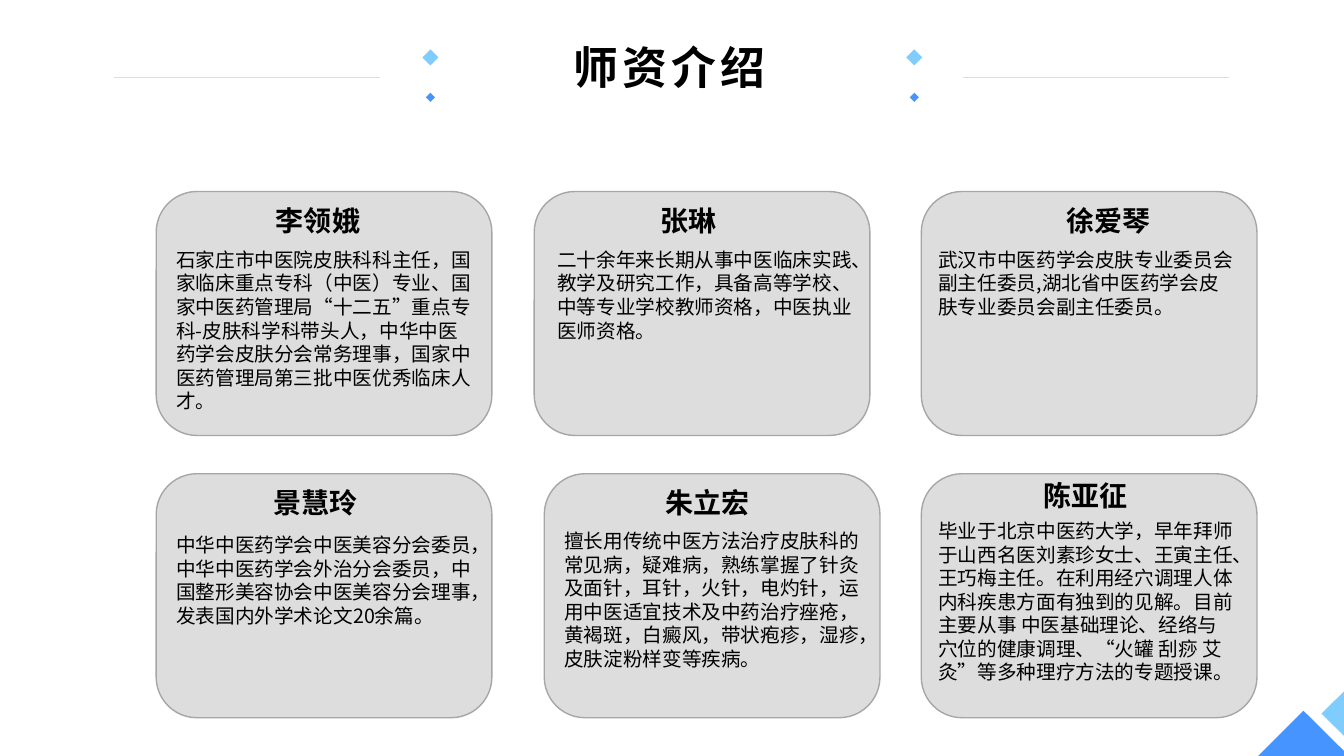
from typing import NamedTuple

from lxml import etree
from pptx import Presentation
from pptx.dml.color import RGBColor
from pptx.enum.shapes import MSO_CONNECTOR, MSO_SHAPE
from pptx.enum.text import MSO_AUTO_SIZE, PP_ALIGN
from pptx.oxml.ns import qn
from pptx.util import Inches, Pt

DIAMOND = MSO_SHAPE.DIAMOND
ROUND = MSO_SHAPE.ROUNDED_RECTANGLE
STRAIGHT = MSO_CONNECTOR.STRAIGHT
GROW = MSO_AUTO_SIZE.SHAPE_TO_FIT_TEXT
LEFT, CENTER = PP_ALIGN.LEFT, PP_ALIGN.CENTER

FONT = "Noto Sans CJK SC"
HEX = {
    "text": "000000",
    "card": "DDDDDD",
    "edge": "A6A6A6",
    "sky": "7FCCFF",
    "blue": "4594FF",
}
CELL = Inches(0.1)
COLS, ROWS = 133.33, 75
CARD_W, CARD_H = 33.3, 24.2
TOP, LOW = 19, 47
BIO_W = 31.3


class Box(NamedTuple):
    col: float
    row: float
    wide: float
    high: float


class Card(NamedTuple):
    col: float
    row: float
    mid: float
    name_row: float
    bio_col: float
    bio_row: float
    lines: int
    name: str
    bio: str


class Gem(NamedTuple):
    row: float
    size: float
    hue: str


class Patch(NamedTuple):
    hue: str
    dots: list[tuple[float, float]]


CARDS = [
    Card(15.5, TOP, 31.55, 19.7, 16.5, 24.1, 7, "李领娥",
         "石家庄市中医院皮肤科科主任，国家临床重点专科（中医）专业、国家中医药管理局“十二五”重点专科-皮肤科学科带头人，"
         "中华中医药学会皮肤分会常务理事，国家中医药管理局第三批中医优秀临床人才。"),
    Card(53, TOP, 68.3, 19.7, 54.3, 24.1, 4, "张琳",
         "二十余年来长期从事中医临床实践、教学及研究工作，具备高等学校、中等专业学校教师资格，中医执业医师资格。"),
    Card(91.4, TOP, 110, 19.7, 92.1, 24.1, 3, "徐爱琴",
         "武汉市中医药学会皮肤专业委员会副主任委员,湖北省中医药学会皮肤专业委员会副主任委员。"),
    Card(15.5, LOW, 31.3, 47.7, 16.5, 52.4, 4, "景慧玲",
         "中华中医药学会中医美容分会委员，中华中医药学会外治分会委员，中国整形美容协会中医美容分会理事，"
         "发表国内外学术论文20余篇。"),
    Card(54, LOW, 70.2, 47.7, 55, 52, 6, "朱立宏",
         "擅长用传统中医方法治疗皮肤科的常见病，疑难病，熟练掌握了针灸及面针，耳针，火针，电灼针，"
         "运用中医适宜技术及中药治疗痤疮，黄褐斑，白癜风，带状疱疹，湿疹，皮肤淀粉样变等疾病。"),
    Card(91.4, LOW, 107.7, 47, 92.1, 51, 7, "陈亚征",
         "毕业于北京中医药大学，早年拜师于山西名医刘素珍女士、王寅主任、王巧梅主任。"
         "在利用经穴调理人体内科疾患方面有独到的见解。目前主要从事 中医基础理论、经络与穴位的健康调理、"
         "“火罐 刮痧 艾灸”等多种理疗方法的专题授课。"),
]
GEMS = [Gem(4.9, 1.6, "sky"), Gem(9.2, 0.9, "blue")]
GEM_MIDS = [42.7, 90.7]
RULES = [11.3, 95.5]
RULE_W, RULE_ROW = 26.4, 7.7
PATCHES = [
    Patch("sky", [(COLS, 68.6), (COLS, 73), (131.1, 70.8)]),
    Patch("blue", [(129.3, 70.5), (COLS, 74.5), (COLS, ROWS), (124.8, ROWS)]),
]


def grid(cells: float) -> int:
    return round(cells * CELL)


def tint(key: str) -> RGBColor:
    return RGBColor.from_string(HEX[key])


def paint(shape, hue: str, edge: str = "") -> None:
    shape.shadow.inherit = False
    shape.fill.solid()
    shape.fill.fore_color.rgb = tint(hue)
    if edge:
        shape.line.color.rgb = tint(edge)
        shape.line.width = Pt(1)
    else:
        shape.line.fill.background()


def put(slide, kind, box: Box, hue: str, edge: str = "") -> None:
    paint(slide.shapes.add_shape(kind, *map(grid, box)), hue, edge)


def write(slide, box: Box, text: str, size: int, bold: bool = False,
          wrap: bool = False, align=LEFT, space: int = 0) -> None:
    frame = slide.shapes.add_textbox(*map(grid, box)).text_frame
    frame.word_wrap = wrap
    frame.auto_size = GROW
    frame.text = text
    para = frame.paragraphs[0]
    para.alignment = align
    run = para.runs[0]
    run.font.size = Pt(size)
    run.font.bold = bold
    run.font.color.rgb = tint("text")
    run.font.name = FONT
    props = run.font._element
    etree.SubElement(props, qn("a:ea")).set("typeface", FONT)
    if space:
        props.set("spc", str(space * 100))


def rule(slide, col: float) -> None:
    line = slide.shapes.add_connector(
        STRAIGHT, grid(col), grid(RULE_ROW), grid(col + RULE_W), grid(RULE_ROW))
    line.line.color.rgb = tint("card")
    line.line.width = Pt(0.5)
    etree.SubElement(line._element.spPr, qn("a:effectLst"))


def patch(slide, part: Patch) -> None:
    first, *rest = [(grid(col), grid(row)) for col, row in part.dots]
    path = slide.shapes.build_freeform(*first)
    path.add_line_segments(rest, close=True)
    paint(path.convert_to_shape(), part.hue)


def card(slide, item: Card) -> None:
    put(slide, ROUND, Box(item.col, item.row, CARD_W, CARD_H), "card", "edge")
    wide = 2.8 * len(item.name) + 2
    write(slide, Box(item.mid - wide / 2, item.name_row, wide, 4.4),
          item.name, 20, bold=True, align=CENTER)
    high = 2.36 * item.lines + 1
    write(slide, Box(item.bio_col, item.bio_row, BIO_W, high),
          item.bio, 14, wrap=True)


def main() -> None:
    deck = Presentation()
    deck.slide_width, deck.slide_height = grid(COLS), grid(ROWS)
    slide = deck.slides.add_slide(deck.slide_layouts[6])
    for mid in GEM_MIDS:
        for gem in GEMS:
            put(slide, DIAMOND,
                Box(mid - gem.size / 2, gem.row, gem.size, gem.size), gem.hue)
    for part in PATCHES:
        patch(slide, part)
    for col in RULES:
        rule(slide, col)
    write(slide, Box(55.9, 3.4, 21.4, 6.4), "师资介绍", 32, bold=True, space=3)
    for item in CARDS:
        card(slide, item)
    deck.save("out.pptx")


if __name__ == "__main__":
    main()
